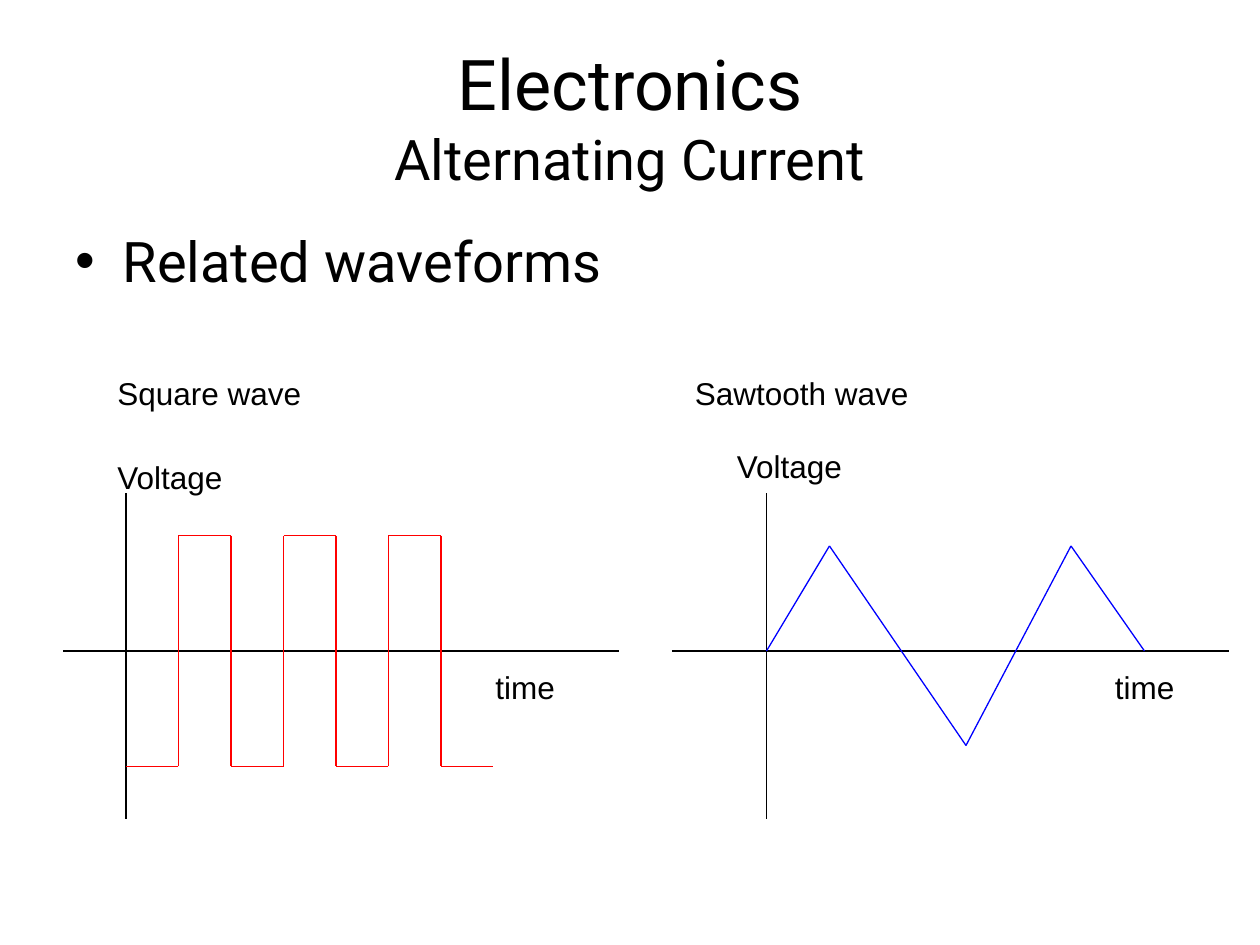
from itertools import pairwise

from lxml.etree import SubElement
from pptx import Presentation
from pptx.dml.color import RGBColor
from pptx.enum.shapes import MSO_CONNECTOR as Connector
from pptx.enum.text import MSO_ANCHOR as Anchor, MSO_AUTO_SIZE as AutoSize, PP_ALIGN as Align
from pptx.oxml.ns import qn
from pptx.util import Pt

BLACK = RGBColor(0, 0, 0)
RED = RGBColor(255, 0, 0)
BLUE = RGBColor(0, 0, 255)
HEADING_FONT = "Roboto"
LABEL_FONT = "Arial"


def format_run(run, size, font):
    run.font.size = Pt(size)
    run.font.name = font
    run.font.color.rgb = BLACK


def place_title(slide, left, top, width, height):
    title = slide.shapes.title
    title.left, title.top, title.width, title.height = map(Pt, (left, top, width, height))
    frame = title.text_frame
    frame.text = "Electronics\vAlternating Current"
    frame.vertical_anchor = Anchor.MIDDLE
    heading = frame.paragraphs[0]
    heading.alignment = Align.CENTER
    for run, size in zip(heading.runs, (40, 32)):
        format_run(run, size, HEADING_FONT)
    line_break = heading._p.find(qn("a:br"))
    SubElement(line_break, qn("a:rPr")).set("sz", "4000")


def add_bullet(slide, left, top, width, height):
    frame = slide.shapes.add_textbox(Pt(left), Pt(top), Pt(width), Pt(height)).text_frame
    frame.word_wrap = True
    frame.text = "Related waveforms"
    topic = frame.paragraphs[0]
    format_run(topic.runs[0], 32, HEADING_FONT)
    properties = topic._p.get_or_add_pPr()
    properties.set("marL", str(Pt(27)))
    properties.set("indent", str(Pt(-27)))
    SubElement(properties, qn("a:buFont")).set("typeface", LABEL_FONT)
    SubElement(properties, qn("a:buChar")).set("char", "•")


def add_label(slide, text, left, top, width):
    frame = slide.shapes.add_textbox(Pt(left), Pt(top), Pt(width), Pt(29)).text_frame
    frame.word_wrap = True
    frame.auto_size = AutoSize.SHAPE_TO_FIT_TEXT
    frame.text = text
    format_run(frame.paragraphs[0].runs[0], 18, LABEL_FONT)


def add_line(slide, start, end, color):
    line = slide.shapes.add_connector(Connector.STRAIGHT, *map(Pt, (*start, *end)))
    line.line.color.rgb = color
    line.line.width = Pt(0.75)
    SubElement(line._element.spPr, qn("a:effectLst"))


def add_wave_graph(slide, left, top, width, height, name, name_x, voltage_at, time_x,
                   voltage_axis_x, wave, color):
    origin_x, origin_y = left + voltage_axis_x, top + 162
    add_line(slide, (origin_x, top + 72), (origin_x, top + height), BLACK)
    add_line(slide, (left, origin_y), (left + width, origin_y), BLACK)
    add_label(slide, name, left + name_x, top, 282)
    add_label(slide, "Voltage", left + voltage_at[0], top + voltage_at[1], 138)
    add_label(slide, "time", left + time_x, origin_y + 6, 90)
    points = [(origin_x + x, origin_y - voltage) for x, voltage in wave]
    for start, end in pairwise(points):
        add_line(slide, start, end, color)


def square_wave(step, low, high, count):
    points = []
    for i in range(count):
        level = high if i % 2 else low
        points += [(i * step, level), ((i + 1) * step, level)]
    return points


def main():
    deck = Presentation()
    deck.slide_width, deck.slide_height = Pt(720), Pt(540)
    slide = deck.slides.add_slide(deck.slide_layouts[5])
    place_title(slide, 36, 21.6, 648, 90)
    add_bullet(slide, 36, 126, 648, 356.4)
    add_wave_graph(slide, 36, 210, 318, 258, "Square wave", 24, (24, 48), 240,
                   36, square_wave(30, -66, 66, 7), RED)
    sawtooth = [(0, 0), (36, 60), (114, -54), (174, 60), (216, 0)]
    add_wave_graph(slide, 384, 210, 318, 258, "Sawtooth wave", 6, (30, 42), 246,
                   54, sawtooth, BLUE)
    deck.save("out.pptx")


if __name__ == "__main__":
    main()
